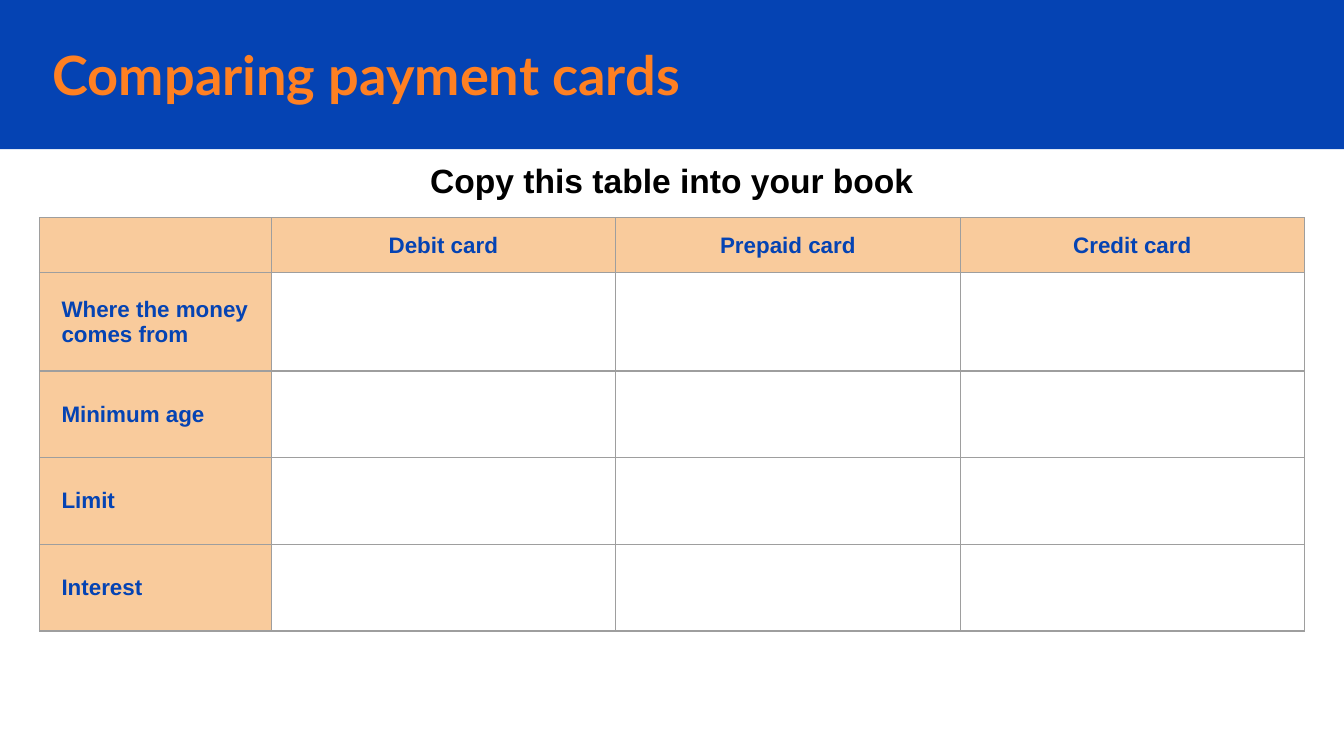
"""Build the slide that compares payment cards."""
from dataclasses import dataclass

from lxml.etree import SubElement
from pptx import Presentation
from pptx.dml.color import RGBColor
from pptx.enum.shapes import MSO_SHAPE
from pptx.enum.text import MSO_ANCHOR, PP_ALIGN
from pptx.oxml import parse_xml
from pptx.oxml.ns import nsdecls, qn
from pptx.slide import Slide
from pptx.table import _Cell as Cell
from pptx.text.text import TextFrame
from pptx.util import Inches, Pt

BLUE = RGBColor(0x05, 0x43, 0xB3)
ORANGE = RGBColor(0xFF, 0x80, 0x22)
PEACH = RGBColor(0xF9, 0xCB, 0x9C)
GREY = RGBColor(0x9E, 0x9E, 0x9E)
BLACK = RGBColor(0, 0, 0)

UNIT = Inches(0.1)
WIDE, HIGH = 100, 56.25
HEADS = ("", "Debit card", "Prepaid card", "Credit card")
SIDES = ("Where the money comes from", "Minimum age", "Limit", "Interest")
COLS = (17.25,) + (25.63,) * 3
ROWS = (4.1, 7.05) + (6.45,) * 3


@dataclass(frozen=True)
class Box:
    left: float
    top: float
    wide: float
    high: float

    def place(self) -> tuple[int, ...]:
        return tuple(span(n) for n in (self.left, self.top, self.wide, self.high))


@dataclass(frozen=True)
class Style:
    size: float
    font: str
    color: RGBColor
    align: PP_ALIGN = PP_ALIGN.LEFT


TITLE = Style(29, "Lato", ORANGE)
TASK = Style(18, "Arial", BLACK, PP_ALIGN.CENTER)
HEAD = Style(12, "Arial", BLUE, PP_ALIGN.CENTER)
SIDE = Style(12, "Arial", BLUE)


def span(count: float) -> int:
    return round(count * UNIT)


def write(frame: TextFrame, text: str, style: Style) -> None:
    line = frame.paragraphs[0]
    line.alignment = style.align
    run = line.add_run()
    run.text = text
    run.font.size = Pt(style.size)
    run.font.name = style.font
    run.font.bold = True
    run.font.color.rgb = style.color


def label(slide: Slide, box: Box, text: str, style: Style, anchor: MSO_ANCHOR) -> None:
    frame = slide.shapes.add_textbox(*box.place()).text_frame
    frame.word_wrap = True
    frame.vertical_anchor = anchor
    frame.margin_left = frame.margin_right = UNIT
    frame.margin_top = frame.margin_bottom = UNIT
    write(frame, text, style)


def band(slide: Slide, box: Box) -> None:
    shape = slide.shapes.add_shape(MSO_SHAPE.RECTANGLE, *box.place())
    shape.shadow.inherit = False
    shape.fill.solid()
    shape.fill.fore_color.rgb = BLUE
    shape.line.fill.background()


def border(cell: Cell) -> None:
    props = cell._tc.get_or_add_tcPr()
    for spot, side in enumerate("LRTB"):
        edge = parse_xml(f'<a:ln{side} {nsdecls("a")} w="{Pt(0.75)}"/>')
        fill = SubElement(edge, qn("a:solidFill"))
        SubElement(fill, qn("a:srgbClr"), val=str(GREY))
        props.insert(spot, edge)


def dress(cell: Cell, row: int, col: int) -> None:
    if row and col:
        cell.fill.background()
    else:
        cell.fill.solid()
        cell.fill.fore_color.rgb = PEACH
    border(cell)
    text = "" if row and col else SIDES[row - 1] if row else HEADS[col]
    if text:
        cell.vertical_anchor = MSO_ANCHOR.MIDDLE
        cell.margin_left = cell.margin_right = span(1.65 if row else 1)
        cell.margin_top = cell.margin_bottom = span(1.65 if row else 0.5)
        write(cell.text_frame, text, SIDE if row else HEAD)


def grid(slide: Slide, left: float, top: float) -> None:
    box = Box(left, top, sum(COLS), sum(ROWS))
    table = slide.shapes.add_table(len(ROWS), len(COLS), *box.place()).table
    table.first_row = table.horz_banding = False
    for col, wide in enumerate(COLS):
        table.columns[col].width = span(wide)
    for row, high in enumerate(ROWS):
        table.rows[row].height = span(high)
        for col in range(len(COLS)):
            dress(table.cell(row, col), row, col)


def main() -> None:
    deck = Presentation()
    deck.slide_width, deck.slide_height = span(WIDE), span(HIGH)
    slide = deck.slides.add_slide(deck.slide_layouts[6])
    band(slide, Box(0, 0, WIDE, 11.1))
    label(slide, Box(2.93, 2.7, 84.6, 5.6), "Comparing payment cards", TITLE, MSO_ANCHOR.MIDDLE)
    grid(slide, 2.93, 16.2)
    label(slide, Box(0, 10.9, WIDE, 5), "Copy this table into your book", TASK, MSO_ANCHOR.TOP)
    deck.save("out.pptx")


if __name__ == "__main__":
    main()
